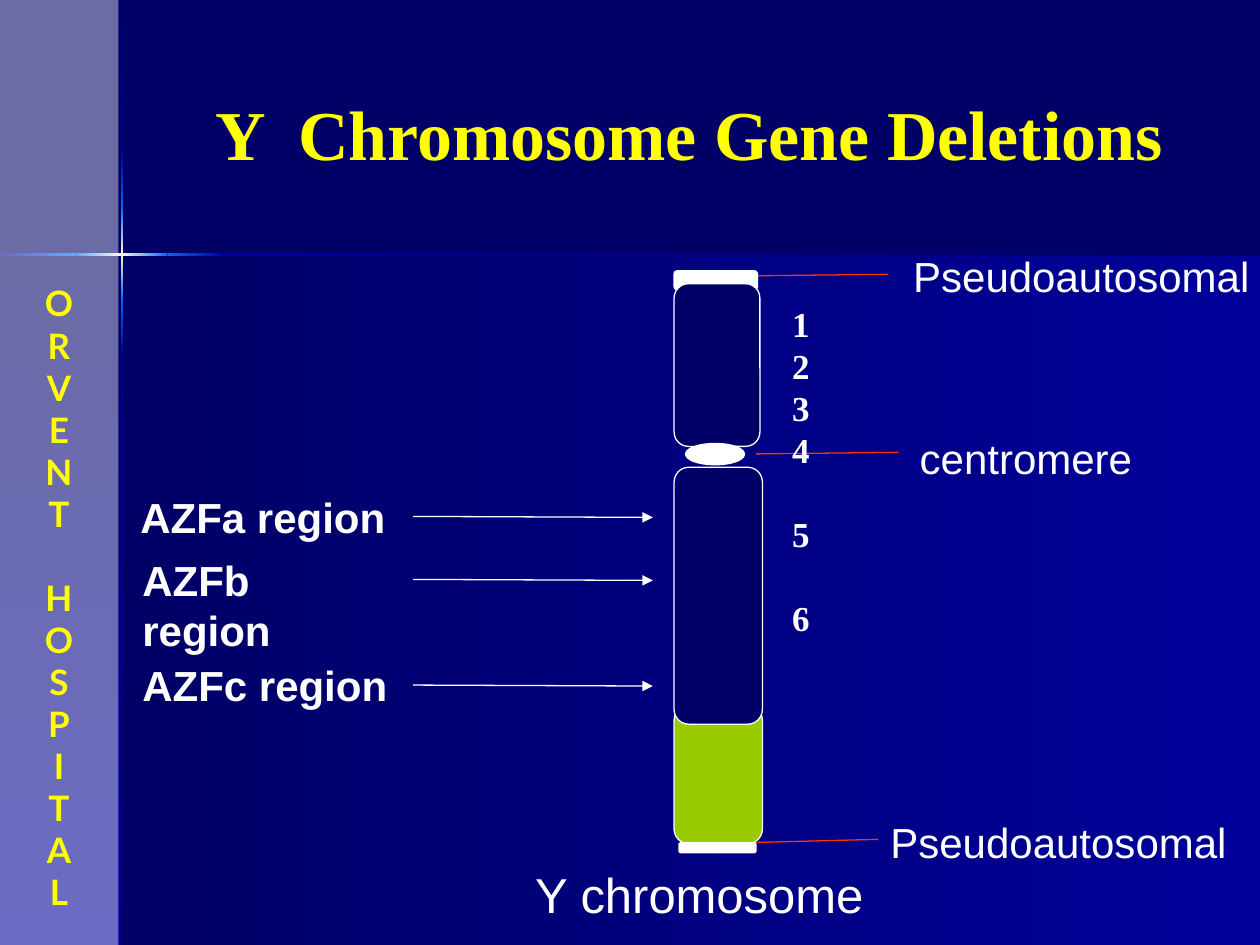
from lxml.etree import SubElement
from pptx import Presentation
from pptx.dml.color import RGBColor
from pptx.enum.shapes import MSO_CONNECTOR, MSO_SHAPE
from pptx.enum.text import MSO_AUTO_SIZE, PP_ALIGN
from pptx.oxml.ns import qn
from pptx.util import Cm, Pt

NAVY, BLUE, BRIGHT, GLOW = "000066", "000099", "0066FF", "FFFFCC"
WHITE, YELLOW, RED, GREEN = "FFFFFF", "FFFF00", "FF3300", "99CC00"

TITLE = {"name": "Times New Roman", "size": Pt(40), "bold": True}
SIDE = {"name": "Lato", "size": Pt(20), "bold": True}
NUMBER = {"name": "Times New Roman", "size": Pt(20), "bold": True}
LABEL = {"name": "Arial", "size": Pt(24), "bold": False}
REGION = {"name": "Arial", "size": Pt(24), "bold": True}
CAPTION = {"name": "Arial", "size": Pt(28), "bold": False}

ACROSS, DOWN = 0, 90
ROW = Pt(24)


def colour(value):
    return RGBColor.from_string(value)


def add_block(slide, kind, box, fill, line=None):
    shape = slide.shapes.add_shape(kind, *map(Cm, box))
    shape.shadow.inherit = False
    shape.fill.solid()
    shape.fill.fore_color.rgb = colour(fill)
    if line:
        shape.line.color.rgb = colour(line)
        shape.line.width = Pt(0.75)
    else:
        shape.line.fill.background()
    return shape


def add_gradient(slide, box, colours, angle):
    """Rectangle with evenly spaced gradient stops."""
    shape = add_block(slide, MSO_SHAPE.RECTANGLE, box, NAVY)
    shape.fill.gradient()
    properties = shape._element.spPr
    stops = properties.find(".//" + qn("a:gsLst"))
    for stop in list(stops):
        stops.remove(stop)
    for index, value in enumerate(colours):
        position = index * 100000 // (len(colours) - 1)
        stop = SubElement(stops, qn("a:gs"), pos=str(position))
        SubElement(stop, qn("a:srgbClr"), val=value)
    properties.find(".//" + qn("a:lin")).set("ang", str(angle * 60000))


def add_line(slide, start, end, line, arrow=False):
    connector = slide.shapes.add_connector(
        MSO_CONNECTOR.STRAIGHT, *map(Cm, start + end))
    connector.line.color.rgb = colour(line)
    connector.line.width = Pt(0.75)
    properties = connector._element.spPr
    if arrow:
        SubElement(properties.find(qn("a:ln")), qn("a:tailEnd"), type="triangle")
    SubElement(properties, qn("a:effectLst"))


def add_text(slide, box, lines, style, text_colour=WHITE, wrap=True,
             align=PP_ALIGN.LEFT, row=None, gaps=()):
    """One paragraph per line; those listed in gaps have a row free above."""
    frame = slide.shapes.add_textbox(*map(Cm, box)).text_frame
    frame.word_wrap = wrap
    frame.auto_size = MSO_AUTO_SIZE.SHAPE_TO_FIT_TEXT
    for index, line in enumerate(lines):
        paragraph = frame.add_paragraph() if index else frame.paragraphs[0]
        paragraph.alignment = align
        if row:
            paragraph.line_spacing = row
        if index in gaps:
            paragraph.space_before = row
        run = paragraph.add_run()
        run.text = line
        for key, value in style.items():
            setattr(run.font, key, value)
        run.font.color.rgb = colour(text_colour)


def add_background(slide):
    # Panels below the horizontal rule
    add_gradient(slide, (2.46, 5.13, 22.94, 13.92), (NAVY, BLUE), ACROSS)
    add_gradient(slide, (0, 5.13, 2.46, 13.92), (NAVY, BLUE), DOWN)

    # Glowing rules that cross at the top left
    segments = [(NAVY, BLUE), (BLUE, BRIGHT), (BRIGHT, GLOW, BRIGHT),
                (BRIGHT, BLUE), (BLUE, NAVY)]
    rows = [0.03, 3.07, 4.19, 6.05, 7.16, 19.05]
    for top, bottom, colours in zip(rows, rows[1:], segments):
        add_gradient(slide, (2.44, top, 0.05, bottom - top), colours, DOWN)
    columns = [0, 1.54, 3.38, 4.5, 25.4]
    for left, right, colours in zip(columns, columns[1:], segments[1:]):
        add_gradient(slide, (left, 5.11, right - left, 0.05), colours, ACROSS)

    # Translucent side band with the vertical name
    band = add_block(slide, MSO_SHAPE.RECTANGLE, (0, 0, 2.39, 19.05), WHITE)
    fill = band._element.spPr.find(qn("a:solidFill"))
    SubElement(fill[0], qn("a:alpha"), val="42000")
    add_text(slide, (0.2, 5.56, 1.98, 13.08), "ORVENTHOSPITAL", SIDE, YELLOW,
             align=PP_ALIGN.CENTER, row=ROW, gaps=(6,))


def add_chromosome(slide):
    rounded = MSO_SHAPE.ROUNDED_RECTANGLE
    parts = [
        (rounded, (13.59, 5.46, 1.68, 0.38), WHITE),
        (rounded, (13.59, 5.72, 1.73, 3.28), NAVY),
        (MSO_SHAPE.OVAL, (13.82, 8.94, 1.19, 0.43), WHITE),
        (rounded, (13.59, 14.22, 1.78, 2.79), GREEN),
        (rounded, (13.69, 16.99, 1.55, 0.2), WHITE),
        (rounded, (13.59, 9.42, 1.78, 5.18), NAVY),
    ]
    for kind, box, fill in parts:
        add_block(slide, kind, box, fill, WHITE)


def add_labels(slide):
    # Red leader lines and the labels to the right
    for start, end in [((15.24, 5.56), (17.91, 5.53)),
                       ((15.24, 9.15), (18.11, 9.12)),
                       ((15.01, 16.99), (17.7, 16.92))]:
        add_line(slide, start, end, RED)
    add_text(slide, (18.29, 8.59, 5.84, 1.27), ["centromere"], LABEL)
    for left, top in [(18.16, 4.93), (17.7, 16.33)]:
        add_text(slide, (left, top, 7.29, 1.27), ["Pseudoautosomal"], LABEL,
                 wrap=False)

    # Interval numbers
    add_text(slide, (15.72, 5.97, 0.86, 10.41), "123456", NUMBER,
             wrap=False, row=ROW, gaps=(4, 5))

    # Regions with arrows to the long arm
    for name, left, top, arrow_top in [("AZFa region", 2.58, 9.78, 10.41),
                                       ("AZFb region", 2.62, 11.05, 11.68),
                                       ("AZFc region", 2.62, 13.18, 13.81)]:
        add_text(slide, (left, top, 5.46, 1.27), [name], REGION, wrap=False)
        add_line(slide, (8.33, arrow_top), (13.16, arrow_top + 0.02), WHITE,
                 arrow=True)


def main():
    presentation = Presentation()
    presentation.slide_width, presentation.slide_height = Cm(25.4), Cm(19.05)
    slide = presentation.slides.add_slide(presentation.slide_layouts[6])
    slide.background.fill.solid()
    slide.background.fill.fore_color.rgb = colour(NAVY)

    add_background(slide)
    add_text(slide, (4.09, 1.7, 21.41, 1.96), ["Y  Chromosome Gene Deletions"],
             TITLE, YELLOW)
    add_labels(slide)
    add_chromosome(slide)
    add_text(slide, (10.54, 17.3, 8.84, 1.45), ["Y chromosome"], CAPTION)
    presentation.save("out.pptx")


if __name__ == "__main__":
    main()
